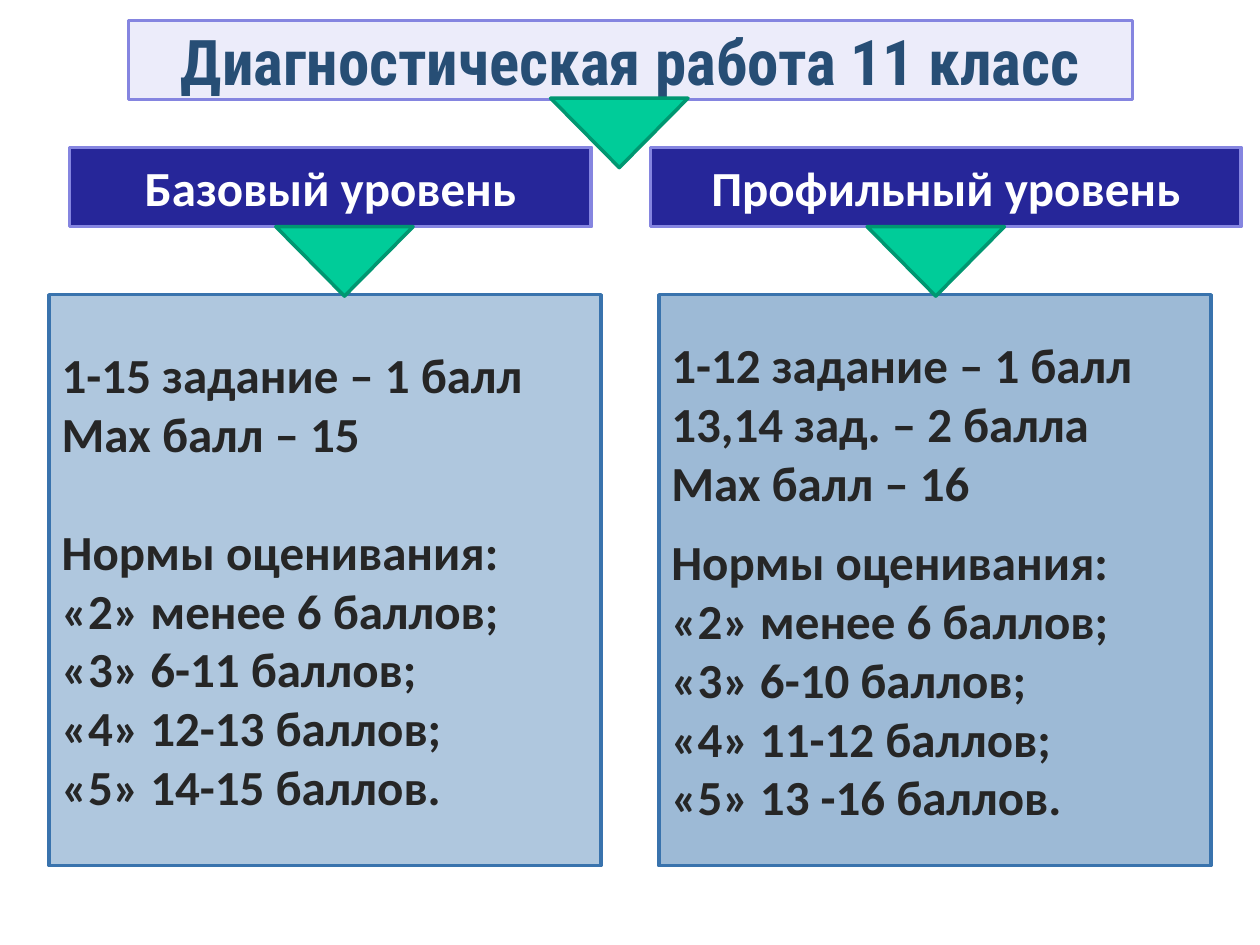
from lxml import etree
from pptx import Presentation
from pptx import util as u
from pptx.dml.color import RGBColor
from pptx.enum import shapes, text
from pptx.oxml import ns

# Content
TITLE = "Диагностическая работа 11 класс"
LEVELS = [
    {
        "name": "Базовый уровень",
        "heading_left": 1.4, "heading_width": 10.52,
        "panel_left": 0.99, "arrow_left": 5.56,
        "opacity": 40, "gap": 33.6,
        "tasks": ["1-15 задание – 1 балл", "Мах балл – 15"],
        "norms": ["«2» менее 6 баллов;", "«3» 6-11 баллов;",
                  "«4» 12-13 баллов;", "«5» 14-15 баллов."],
    },
    {
        "name": "Профильный уровень",
        "heading_left": 13.11, "heading_width": 11.91,
        "panel_left": 13.28, "arrow_left": 17.48,
        "opacity": 49, "gap": 12,
        "tasks": ["1-12 задание – 1 балл", "13,14 зад. – 2 балла", "Мах балл – 16"],
        "norms": ["«2» менее 6 баллов;", "«3» 6-10 баллов;",
                  "«4» 11-12 баллов;", "«5» 13 -16 баллов."],
    },
]
NORMS_LABEL = "Нормы оценивания:"

# Colours
LAVENDER = RGBColor(0xAD, 0xAD, 0xEB)
VIOLET = RGBColor(0x85, 0x85, 0xE0)
NAVY = RGBColor(0x26, 0x26, 0x99)
STEEL = RGBColor(0x39, 0x73, 0xAD)
GREEN = RGBColor(0x00, 0xCC, 0x99)
DARK_GREEN = RGBColor(0x00, 0x97, 0x71)
TITLE_BLUE = RGBColor(0x27, 0x4E, 0x75)
WHITE = RGBColor(0xFF, 0xFF, 0xFF)
CHARCOAL = RGBColor(0x26, 0x26, 0x26)

# Measures in centimetres
BAR_HEIGHT = 1.6
TITLE_TOP = 0.41
HEADING_TOP = 2.97
PANEL_TOP, PANEL_WIDTH, PANEL_HEIGHT = 5.94, 11.13, 11.51
ARROW_WIDTH, ARROW_HEIGHT = 2.77, 1.4


def paint(shape, fill, line, opacity=100):
    shape.fill.solid()
    shape.fill.fore_color.rgb = fill
    if opacity < 100:
        colour = shape.fill._xPr.find(".//" + ns.qn("a:srgbClr"))
        etree.SubElement(colour, ns.qn("a:alpha"), val=str(opacity * 1000))
    shape.line.color.rgb = line
    shape.line.width = u.Pt(2)


def place(shape, left, top, width, height):
    shape.left, shape.top = u.Cm(left), u.Cm(top)
    shape.width, shape.height = u.Cm(width), u.Cm(height)


def write(box, lines, font="Calibri", size=28, colour=CHARCOAL,
          align=text.PP_ALIGN.CENTER, spacing=1.0, gaps=None):
    frame = box.text_frame
    frame.word_wrap = True
    frame.auto_size = text.MSO_AUTO_SIZE.NONE
    frame.vertical_anchor = text.MSO_ANCHOR.MIDDLE
    for index, line in enumerate(lines):
        para = frame.paragraphs[0] if index == 0 else frame.add_paragraph()
        properties = para._p.get_or_add_pPr()
        properties.set("marL", "0")
        properties.set("indent", "0")
        etree.SubElement(properties, ns.qn("a:buNone"))
        para.alignment = align
        para.line_spacing = spacing
        para.space_before = u.Pt((gaps or {}).get(index, 0))
        span = para.add_run()
        span.text = line
        span.font.name, span.font.size, span.font.bold = font, u.Pt(size), True
        span.font.color.rgb = colour


def add_arrow(page, left, top):
    arrow = page.shapes.add_shape(
        shapes.MSO_SHAPE.FLOWCHART_MERGE,
        u.Cm(left), u.Cm(top), u.Cm(ARROW_WIDTH), u.Cm(ARROW_HEIGHT))
    arrow.shadow.inherit = False
    paint(arrow, GREEN, DARK_GREEN)


def main():
    deck = Presentation()
    deck.slide_width, deck.slide_height = u.Cm(25.4), u.Cm(19.05)
    page = deck.slides.add_slide(deck.slide_layouts[4])  # Comparison layout
    title, *bodies = page.placeholders

    # Title bar
    place(title, 2.59, TITLE_TOP, 20.24, BAR_HEIGHT)
    paint(title, LAVENDER, VIOLET, opacity=22)
    write(title, [TITLE], font="Roboto Condensed", size=36, colour=TITLE_BLUE)
    add_arrow(page, 11.1, TITLE_TOP + BAR_HEIGHT - 0.03)

    # One column per level: heading, arrow, panel
    for level, heading, panel in zip(LEVELS, bodies[::2], bodies[1::2]):
        place(heading, level["heading_left"], HEADING_TOP,
              level["heading_width"], BAR_HEIGHT)
        paint(heading, NAVY, VIOLET)
        write(heading, [level["name"]], colour=WHITE)
        add_arrow(page, level["arrow_left"], HEADING_TOP + BAR_HEIGHT)

        place(panel, level["panel_left"], PANEL_TOP, PANEL_WIDTH, PANEL_HEIGHT)
        paint(panel, STEEL, STEEL, opacity=level["opacity"])
        write(panel, level["tasks"] + [NORMS_LABEL] + level["norms"],
              align=text.PP_ALIGN.LEFT, spacing=u.Pt(33.6),
              gaps={len(level["tasks"]): level["gap"]})

    deck.save("out.pptx")


if __name__ == "__main__":
    main()
